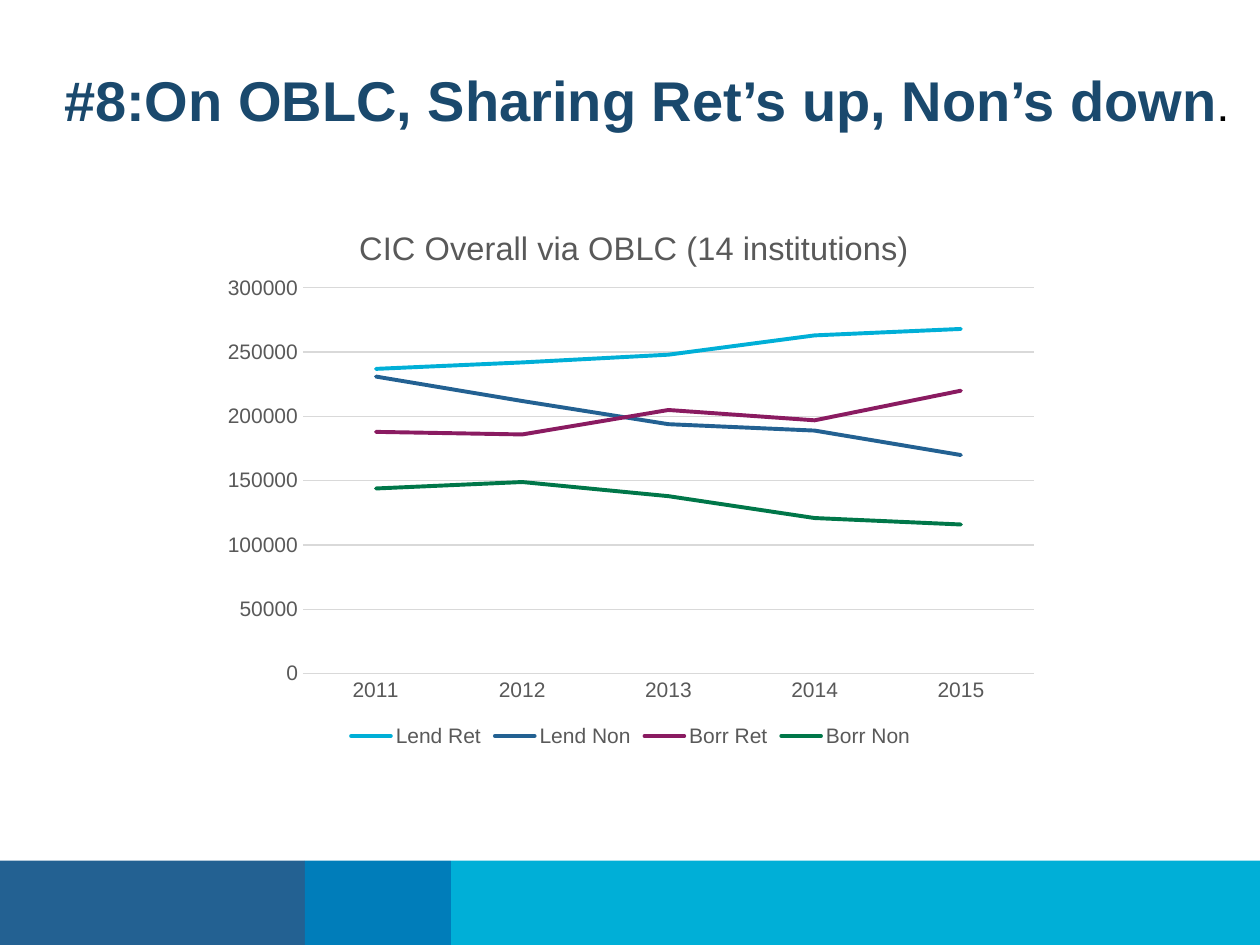
from typing import NamedTuple

from lxml import etree
from pptx import Presentation
from pptx.chart.data import CategoryChartData as ChartData
from pptx.dml.color import RGBColor
from pptx.enum.chart import XL_CHART_TYPE as Kind
from pptx.enum.chart import XL_LEGEND_POSITION as Spot
from pptx.enum.chart import XL_TICK_MARK as Tick
from pptx.enum.shapes import MSO_SHAPE as Form
from pptx.enum.text import MSO_AUTO_SIZE as Fit
from pptx.oxml.ns import qn
from pptx.util import Inches, Pt

SKY = RGBColor(0x00, 0xAF, 0xD7)
BLUE = RGBColor(0x00, 0x7D, 0xBA)
STEEL = RGBColor(0x23, 0x61, 0x92)
PLUM = RGBColor(0x8A, 0x1B, 0x61)
GREEN = RGBColor(0x00, 0x77, 0x49)
NAVY = RGBColor(0x1A, 0x49, 0x6D)
BLACK = RGBColor(0x00, 0x00, 0x00)
GRAY = RGBColor(0x59, 0x59, 0x59)
PALE = RGBColor(0xD9, 0xD9, 0xD9)


class Band(NamedTuple):
    width: float
    color: RGBColor


class Trend(NamedTuple):
    name: str
    values: tuple[int, ...]
    color: RGBColor


BANDS = [Band(2.42, STEEL), Band(1.16, BLUE), Band(6.42, SKY)]
YEARS = ["2011", "2012", "2013", "2014", "2015"]
TRENDS = [
    Trend("Lend Ret", (237000, 242000, 248000, 263000, 268000), SKY),
    Trend("Lend Non", (231000, 212000, 194000, 189000, 170000), STEEL),
    Trend("Borr Ret", (188000, 186000, 205000, 197000, 220000), PLUM),
    Trend("Borr Non", (144000, 149000, 138000, 121000, 116000), GREEN),
]


def style(font, size: float, color: RGBColor, bold: bool = False) -> None:
    look = {"name": "Arial", "size": Pt(size), "bold": bold}
    for key, value in look.items():
        setattr(font, key, value)
    font.color.rgb = color


def stroke(line, color: RGBColor, width: float) -> None:
    line.color.rgb = color
    line.width = Pt(width)


def place(part, after: str | None, marks: dict[str, str | float]) -> None:
    """Pin a chart part with a manual layout."""
    for old in part.findall(qn("c:layout")):
        part.remove(old)
    layout = etree.Element(qn("c:layout"))
    manual = etree.SubElement(layout, qn("c:manualLayout"))
    for key, value in marks.items():
        etree.SubElement(manual, qn(f"c:{key}")).set("val", str(value))
    if after:
        part.find(qn(after)).addnext(layout)
    else:
        part.insert(0, layout)


def draw_bands(slide) -> None:
    left = 0.0
    for band in BANDS:
        box = slide.shapes.add_shape(
            Form.RECTANGLE, Inches(left), Inches(6.83), Inches(band.width), Inches(0.67)
        )
        box.shadow.inherit = False
        box.fill.solid()
        box.fill.fore_color.rgb = band.color
        box.line.fill.background()
        left += band.width


def draw_chart(slide) -> None:
    data = ChartData()
    data.categories = YEARS
    for trend in TRENDS:
        data.add_series(trend.name, trend.values)
    chart = slide.shapes.add_chart(
        Kind.LINE, Inches(1.67), Inches(1.53), Inches(6.67), Inches(4.44), data
    ).chart
    style(chart.font, 10, BLACK)

    # Title and legend
    chart.has_title = True
    title = chart.chart_title
    title.include_in_layout = False
    para = title.text_frame.paragraphs[0]
    run = para.add_run()
    run.text = "CIC Overall via OBLC (14 institutions)"
    style(run.font, 18.6, GRAY)
    chart.has_legend = True
    chart.legend.position = Spot.BOTTOM
    chart.legend.include_in_layout = False
    style(chart.legend.font, 12, GRAY)

    # Axes
    years, counts = chart.category_axis, chart.value_axis
    for axis in (years, counts):
        axis.major_tick_mark = axis.minor_tick_mark = Tick.NONE
        style(axis.tick_labels.font, 12, GRAY)
    stroke(years.format.line, PALE, 0.75)
    counts.format.line.fill.background()
    counts.minimum_scale, counts.maximum_scale = 0, 300000
    counts.major_unit = 50000
    counts.has_major_gridlines = True
    stroke(counts.major_gridlines.format.line, PALE, 0.75)

    # Lines
    plot = chart.plots[0]
    plot.vary_by_categories = False
    for series, trend in zip(plot.series, TRENDS):
        series.smooth = False
        stroke(series.format.line, trend.color, 2.25)
        series.format.line._get_or_add_ln().set("cap", "rnd")

    # Layout
    edge = {"xMode": "edge", "yMode": "edge"}
    space = chart.element.find(qn("c:chart"))
    place(space.find(qn("c:title")), "c:tx", edge | {"x": 0.17, "y": 0.05})
    inner = {"layoutTarget": "inner"} | edge
    area = {"x": 0.11, "y": 0.17, "w": 0.87, "h": 0.69}
    place(space.find(qn("c:plotArea")), None, inner | area)


def draw_title(slide) -> None:
    box = slide.shapes.add_textbox(Inches(0.41), Inches(0.47), Inches(9.59), Inches(0.64))
    frame = box.text_frame
    frame.word_wrap = True
    frame.auto_size = Fit.SHAPE_TO_FIT_TEXT
    para = frame.paragraphs[0]
    parts = [("#8:On OBLC, Sharing Ret’s up, Non’s down", 32, NAVY), (".", 18, BLACK)]
    for text, size, color in parts:
        run = para.add_run()
        run.text = text
        style(run.font, size, color, bold=True)


def main() -> None:
    deck = Presentation()
    deck.slide_width, deck.slide_height = Inches(10), Inches(7.5)
    slide = deck.slides.add_slide(deck.slide_layouts[6])
    draw_bands(slide)
    draw_chart(slide)
    draw_title(slide)
    deck.save("out.pptx")


if __name__ == "__main__":
    main()
